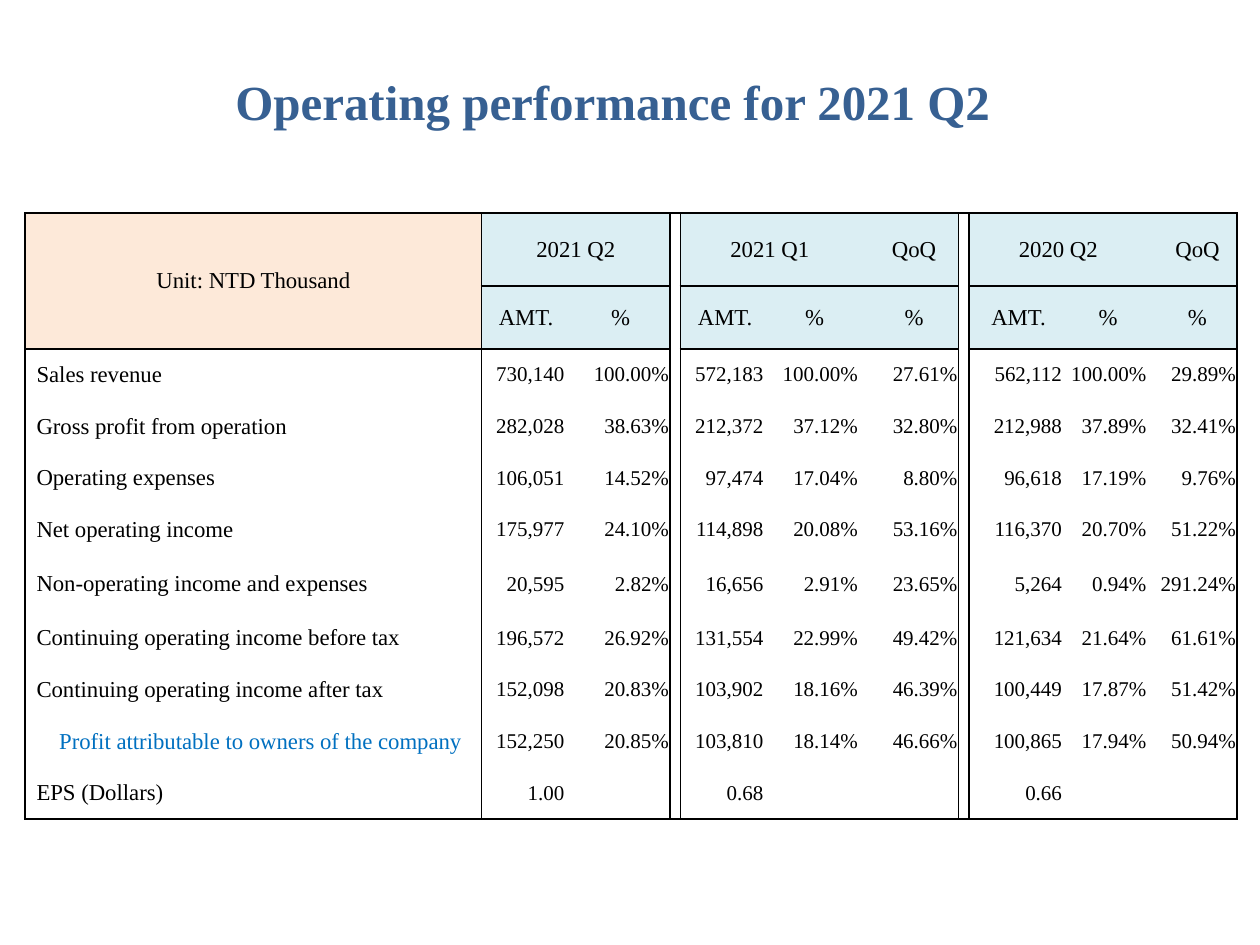
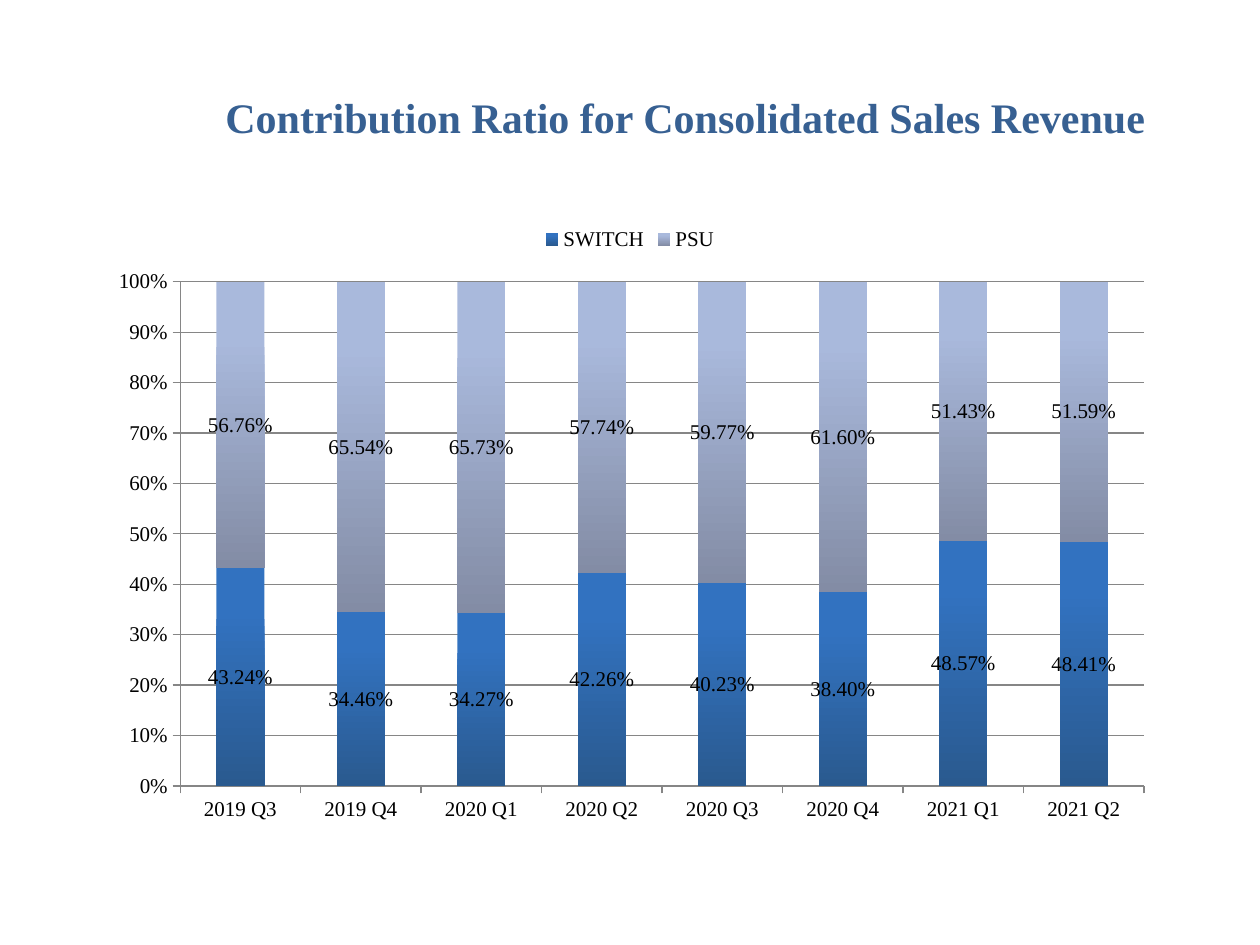
from dataclasses import dataclass

from lxml.etree import SubElement as Sub
from pptx import Presentation
from pptx.chart.data import CategoryChartData as ChartData
from pptx.dml.color import RGBColor as Rgb
from pptx.enum.chart import XL_CHART_TYPE as Kind, XL_LEGEND_POSITION as Spot
from pptx.enum.chart import XL_TICK_MARK as Tick
from pptx.enum.text import MSO_ANCHOR as Anchor, PP_ALIGN as Align
from pptx.oxml import parse_xml
from pptx.oxml.ns import nsdecls, qn
from pptx.util import Inches, Pt


@dataclass(frozen=True)
class Theme:
    font: str = "Times New Roman"
    title: str = "376092"
    ink: str = "000000"
    accent: str = "0070C0"
    peach: str = "FDE9D9"
    aqua: str = "DBEEF3"
    grid: str = "868686"
    bars: tuple = (("3272C0", "2A5A8F"), ("A9B9DC", "838CA5"))
    label: int = 13
    value: int = 12
    line: float = 1


def write(frame, text, size, color, bold=False, align=Align.LEFT):
    para = frame.paragraphs[0]
    para.alignment = align
    run = para.add_run()
    run.text = text
    font = run.font
    font.name, font.size, font.bold = Theme.font, Pt(size), bold
    font.color.rgb = Rgb.from_string(color)


class Deck:
    """Holds the theme and the slide being built."""

    def __init__(self):
        self.theme = Theme()
        self.show = Presentation()
        self.show.slide_width, self.show.slide_height = Inches(10), Inches(7.5)

    def page(self, title, box, size):
        self.slide = self.show.slides.add_slide(self.show.slide_layouts[6])
        frame = self.slide.shapes.add_textbox(*map(Inches, box)).text_frame
        frame.word_wrap = True
        write(frame, title, size, self.theme.title, bold=True)

    def table(self, box, widths, heights):
        frame = self.slide.shapes.add_table(len(heights), len(widths), *map(Inches, box))
        grid = frame.table
        grid.first_row = grid.horz_banding = False
        for col, width in zip(grid.columns, widths):
            col.width = Inches(width)
        for row, height in zip(grid.rows, heights):
            row.height = Inches(height)
        return grid

    def style(self, cell, sides, fill):
        cell.margin_left = cell.margin_right = cell.margin_top = cell.margin_bottom = 0
        cell.vertical_anchor = Anchor.MIDDLE
        props = cell._tc.get_or_add_tcPr()
        for side in "LRTB":
            line = Sub(props, qn(f"a:ln{side}"), w=str(Pt(self.theme.line)))
            if side in sides:
                paint = Sub(line, qn("a:solidFill"))
                Sub(paint, qn("a:srgbClr"), val=self.theme.ink)
            else:
                Sub(line, qn("a:noFill"))
        if fill:
            cell.fill.solid()
            cell.fill.fore_color.rgb = Rgb.from_string(fill)
        else:
            cell.fill.background()

    def font(self, font):
        font.name, font.size = self.theme.font, Pt(self.theme.value)
        font.color.rgb = Rgb.from_string(self.theme.ink)

    def axis(self, axis):
        self.font(axis.tick_labels.font)
        axis.major_tick_mark, axis.minor_tick_mark = Tick.OUTSIDE, Tick.NONE
        axis.format.line.color.rgb = Rgb.from_string(self.theme.grid)

    def chart(self, box, cats, series, area):
        data = ChartData(number_format="0.00%")
        data.categories = cats
        for name, vals in series:
            data.add_series(name, vals)
        chart = self.slide.shapes.add_chart(
            Kind.COLUMN_STACKED, *map(Inches, box), data).chart
        self.font(chart.font)
        chart.has_title = False
        chart.has_legend = True
        chart.legend.position = Spot.TOP
        chart.legend.include_in_layout = False
        self.font(chart.legend.font)
        self.axis(chart.category_axis)
        scale = chart.value_axis
        self.axis(scale)
        scale.minimum_scale, scale.maximum_scale, scale.major_unit = 0, 1, 0.1
        scale.tick_labels.number_format = "0%"
        scale.tick_labels.number_format_is_linked = False
        scale.major_gridlines.format.line.color.rgb = Rgb.from_string(self.theme.grid)
        plot = chart.plots[0]
        plot.gap_width, plot.overlap, plot.vary_by_categories = 150, 100, False
        for bars, tones in zip(plot.series, self.theme.bars):
            fill = bars.format.fill
            fill.gradient()
            fill.gradient_angle = 270
            for stop, tone, place in zip(fill.gradient_stops, tones, (0.2, 1)):
                stop.color.rgb, stop.position = Rgb.from_string(tone), place
            tags = bars.data_labels
            tags.show_value = True
            tags.number_format, tags.number_format_is_linked = "0.00%", False
            self.font(tags.font)
        self.place(chart, area)

    def place(self, chart, area):
        plot = chart._chartSpace.find(".//" + qn("c:plotArea"))
        for old in plot.findall(qn("c:layout")):
            plot.remove(old)
        sizes = "".join(f'<c:{key} val="{val}"/>' for key, val in zip("xywh", area))
        plot.insert(0, parse_xml(
            f'<c:layout {nsdecls("c")}><c:manualLayout><c:layoutTarget val="inner"/>'
            f'<c:xMode val="edge"/><c:yMode val="edge"/>{sizes}'
            '</c:manualLayout></c:layout>'))


WIDTHS = [3.62, 0.71, 0.79, 0.08, 0.71, 0.71, 0.08, 0.71, 0.08, 0.79, 0.63, 0.08, 0.63]
HEIGHTS = [0.58, 0.5] + [0.41] * 4 + [0.45] + [0.41] * 4
GAPS = (3, 8)
BLOCKS = ((0, 0), (1, 2), (3, 3), (4, 7), (8, 8), (9, 12))
AMOUNTS = (1, 4, 9)
SLOTS = (1, 2, 4, 5, 7, 9, 10, 12)
HEADS = {1: "2021 Q2", 4: "2021 Q1", 7: "QoQ", 9: "2020 Q2", 12: "QoQ"}
OWNERS = "Profit attributable to owners of the company"
ITEMS = [
    ("Sales revenue", "730,140 100.00% 572,183 100.00% 27.61% 562,112 100.00% 29.89%"),
    ("Gross profit from operation",
     "282,028 38.63% 212,372 37.12% 32.80% 212,988 37.89% 32.41%"),
    ("Operating expenses", "106,051 14.52% 97,474 17.04% 8.80% 96,618 17.19% 9.76%"),
    ("Net operating income",
     "175,977 24.10% 114,898 20.08% 53.16% 116,370 20.70% 51.22%"),
    ("Non-operating income and expenses",
     "20,595 2.82% 16,656 2.91% 23.65% 5,264 0.94% 291.24%"),
    ("Continuing operating income before tax",
     "196,572 26.92% 131,554 22.99% 49.42% 121,634 21.64% 61.61%"),
    ("Continuing operating income after tax",
     "152,098 20.83% 103,902 18.16% 46.39% 100,449 17.87% 51.42%"),
    (OWNERS, "152,250 20.85% 103,810 18.14% 46.66% 100,865 17.94% 50.94%"),
]
EPS = {1: "1.00", 4: "0.68", 9: "0.66"}


def edges(row, col):
    sides = "".join("L" * (col == first) + "R" * (col == last) for first, last in BLOCKS)
    ruled = col not in GAPS
    if row == 0 or (ruled and row in (1, 2)):
        sides += "T"
    if row == len(HEIGHTS) - 1 or (ruled and row in (0, 1)):
        sides += "B"
    return sides


def results(deck):
    theme = deck.theme
    deck.page("Operating performance for 2021 Q2", (1.77, 0.52, 6.46, 1.51), 28)
    grid = deck.table((0.2, 1.69, 9.61, 4.79), WIDTHS, HEIGHTS)
    for row in range(len(HEIGHTS)):
        for col in range(len(WIDTHS)):
            head = theme.peach if col == 0 else theme.aqua
            fill = head if row < 2 and col not in GAPS else None
            deck.style(grid.cell(row, col), edges(row, col), fill)
    grid.cell(0, 0).merge(grid.cell(1, 0))
    for col in AMOUNTS:
        grid.cell(0, col).merge(grid.cell(0, col + 1))

    titles = {(0, 0): "Unit: NTD Thousand"}
    titles.update({(0, col): text for col, text in HEADS.items()})
    titles.update({(1, col): "AMT." if col in AMOUNTS else "%" for col in SLOTS})
    for spot, text in titles.items():
        write(grid.cell(*spot).text_frame, text, theme.label, theme.ink,
              align=Align.CENTER)

    lines = [(name, dict(zip(SLOTS, vals.split()))) for name, vals in ITEMS]
    lines.append(("EPS (Dollars)", EPS))
    for row, (name, vals) in enumerate(lines, 2):
        cell = grid.cell(row, 0)
        owner = name == OWNERS
        cell.margin_left = Inches(0.27 if owner else 0.09)
        write(cell.text_frame, name, theme.label, theme.accent if owner else theme.ink)
        for col, text in vals.items():
            cell = grid.cell(row, col)
            cell.margin_right = Inches(0.05 if col in AMOUNTS else 0.01)
            write(cell.text_frame, text, theme.value, theme.ink, align=Align.RIGHT)


def ratio(deck):
    deck.page("Contribution Ratio for Consolidated Sales Revenue",
              (1.69, 0.68, 7.56, 1.18), 24)
    cats = ["2019 Q3", "2019 Q4", "2020 Q1", "2020 Q2",
            "2020 Q3", "2020 Q4", "2021 Q1", "2021 Q2"]
    switch = [0.4324, 0.3446, 0.3427, 0.4226, 0.4023, 0.384, 0.4857, 0.4841]
    psu = [round(1 - val, 4) for val in switch]
    deck.chart((0.75, 1.7, 8.5, 4.88), cats, [("SWITCH", switch), ("PSU", psu)],
               (0.08, 0.11, 0.9, 0.82))


def main():
    deck = Deck()
    results(deck)
    ratio(deck)
    deck.show.save("out.pptx")


if __name__ == "__main__":
    main()
